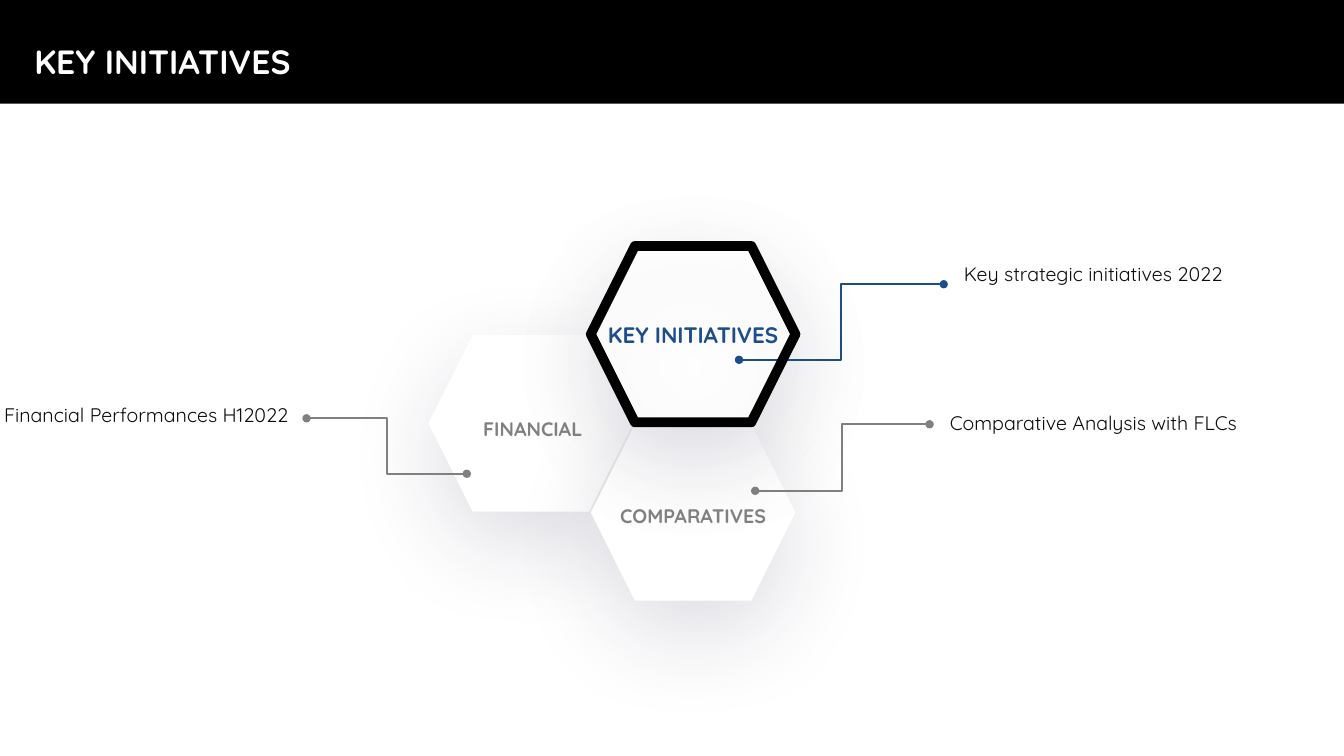
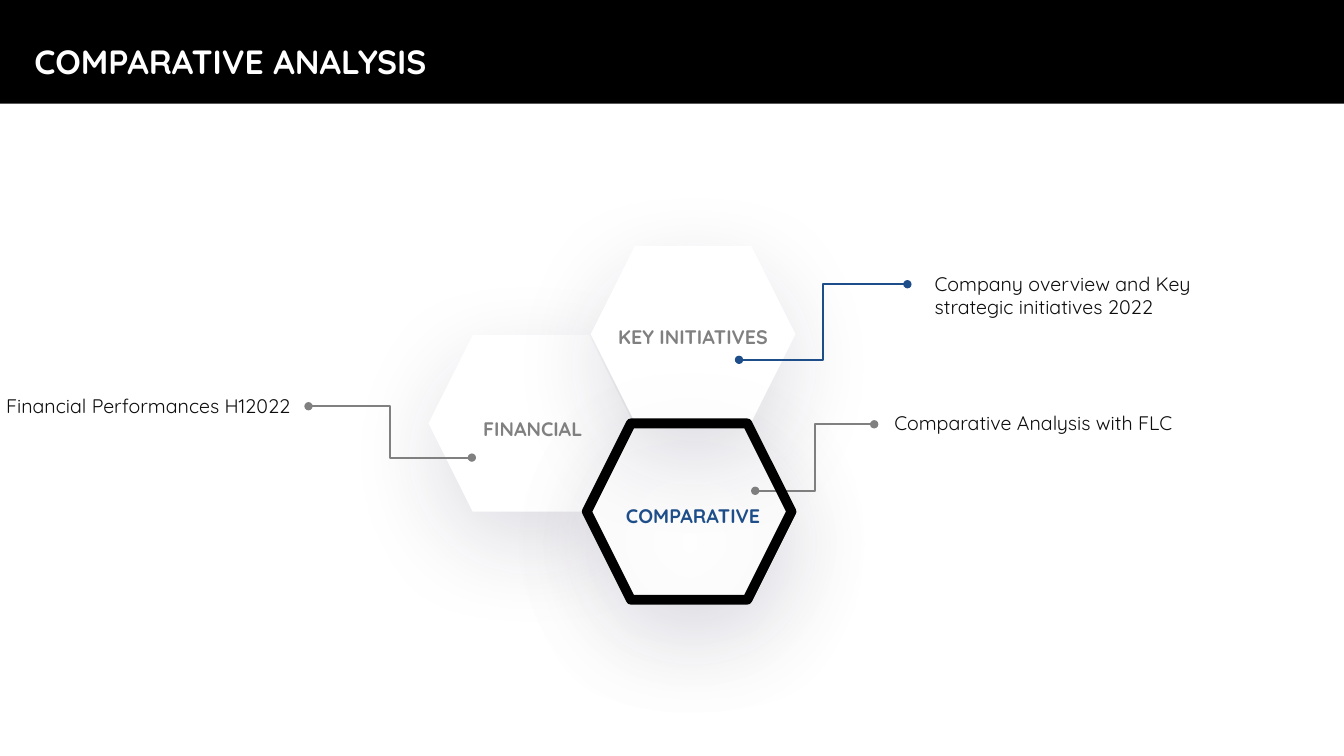
from dataclasses import dataclass

from lxml.etree import SubElement
from pptx import Presentation
from pptx.dml.color import RGBColor
from pptx.enum.shapes import MSO_CONNECTOR, MSO_SHAPE
from pptx.enum.text import MSO_ANCHOR, MSO_AUTO_SIZE, PP_ALIGN
from pptx.oxml.ns import qn
from pptx.util import Inches, Pt

# Shared look
SLIDE_W, SLIDE_H = 13.33, 7.5
BAND_H = 1.03
FONT = "Quicksand"
BLACK, WHITE, INK = "000000", "FFFFFF", "0D0D0D"
BLUE, GRAY, SHADOW = "1D4E89", "808080", "221B43"

# Honeycomb: each column is one step right, each row half a cell down
HEX_W, HEX_H = 2.03, 1.75
COMB_LEFT, COMB_TOP = 4.25, 2.44
COL_STEP, ROW_STEP = 1.61, 1.77 / 2
LABEL_W, LABEL_H = 1.85, 0.22
CALLOUT_W, CALLOUT_H = 2.95, 0.22


@dataclass(frozen=True)
class Cell:
    """A honeycomb cell; the label is offset from the cell's corner."""
    col: int
    row: int
    label_dx: float
    label_dy: float

    @property
    def left(self) -> float:
        return COMB_LEFT + self.col * COL_STEP

    @property
    def top(self) -> float:
        return COMB_TOP + self.row * ROW_STEP


@dataclass(frozen=True)
class Callout:
    """An elbow line from start to end, and text at its own corner."""
    text: str
    start: tuple[float, float]
    end: tuple[float, float]
    corner: tuple[float, float]
    color: str = GRAY


@dataclass(frozen=True)
class Topic:
    title: str
    labels: tuple[str, str, str]
    active: int
    callouts: tuple[Callout, ...]
    active_size: int = 14
    frame_shift: tuple[float, float] = (0, 0)
    edge: float = 0


FINANCIAL = Cell(0, 1, 0.11, 0.82)
COMPARATIVE = Cell(1, 2, 0.09, 0.80)
INITIATIVES = Cell(1, 0, 0.09, 0.79)
CELLS = (FINANCIAL, COMPARATIVE, INITIATIVES)

TOPICS = (
    Topic(
        "KEY INITIATIVES", ("FINANCIAL", "COMPARATIVES", "KEY INITIATIVES"), 2,
        (Callout("Key strategic initiatives 2022",
                 (7.33, 3.57), (9.36, 2.82), (9.56, 2.61), BLUE),
         Callout("Comparative Analysis with FLCs",
                 (7.49, 4.87), (9.22, 4.21), (9.42, 4.08)),
         Callout("Financial Performances H12022",
                 (3.04, 4.15), (4.63, 4.70), (0.04, 4.01))),
        active_size=16,
    ),
    Topic(
        "COMPARATIVE ANALYSIS", ("FINANCIAL", "COMPARATIVE", "KEY INITIATIVES"), 1,
        (Callout("Company overview and Key strategic initiatives 2022",
                 (7.33, 3.57), (9.00, 2.82), (9.27, 2.71), BLUE),
         Callout("Comparative Analysis with FLC",
                 (7.49, 4.87), (8.67, 4.21), (8.87, 4.08)),
         Callout("Financial Performances H12022",
                 (3.06, 4.03), (4.68, 4.54), (0.06, 3.92))),
        frame_shift=(-0.04, -0.01), edge=1,
    ),
)


def rgb(color: str) -> RGBColor:
    return RGBColor.from_string(color)


def write(frame, text: str, *, size: float = 14, color: str = INK,
          bold: bool = False, align=PP_ALIGN.LEFT, leading: float = 16.2,
          anchor=MSO_ANCHOR.TOP, inset: float = 0) -> None:
    """Fill a text frame with one formatted paragraph."""
    frame.word_wrap = True
    frame.auto_size = MSO_AUTO_SIZE.NONE
    frame.vertical_anchor = anchor
    frame.margin_left = frame.margin_right = Inches(inset)
    frame.margin_top = frame.margin_bottom = Inches(inset)
    paragraph = frame.paragraphs[0]
    paragraph.alignment = align
    paragraph.line_spacing = Pt(leading)
    run = paragraph.add_run()
    run.text = text
    run.font.name, run.font.size, run.font.bold = FONT, Pt(size), bold
    run.font.color.rgb = rgb(color)


def add_text(slide, left: float, top: float, width: float, height: float,
             text: str, **style) -> None:
    box = slide.shapes.add_textbox(*map(Inches, (left, top, width, height)))
    write(box.text_frame, text, **style)


def add_figure(slide, kind, left: float, top: float, width: float,
               height: float, fill: str = "", edge: float = 0):
    """Draw a preset shape with an optional fill and black edge."""
    figure = slide.shapes.add_shape(kind, *map(Inches, (left, top, width, height)))
    figure.shadow.inherit = False
    if fill:
        figure.fill.solid()
        figure.fill.fore_color.rgb = rgb(fill)
    else:
        figure.fill.background()
    if edge:
        figure.line.color.rgb = rgb(BLACK)
        figure.line.width = Pt(edge)
    else:
        figure.line.fill.background()
    return figure


def add_hexagon(slide, left: float, top: float, **look) -> None:
    """Draw a honeycomb cell with a soft shadow below it."""
    hexagon = add_figure(slide, MSO_SHAPE.HEXAGON, left, top, HEX_W, HEX_H, **look)
    effects = hexagon._element.spPr.find(qn("a:effectLst"))
    shadow = SubElement(effects, qn("a:outerShdw"), blurRad=str(Pt(69)),
                        dist=str(Pt(22)), dir="5400000", algn="t", rotWithShape="0")
    tint = SubElement(shadow, qn("a:srgbClr"), val=SHADOW)
    SubElement(tint, qn("a:alpha"), val="15000")


def add_callout(slide, callout: Callout) -> None:
    elbow = slide.shapes.add_connector(
        MSO_CONNECTOR.ELBOW, *map(Inches, callout.start + callout.end))
    elbow.line.color.rgb = rgb(callout.color)
    elbow.line.width = Pt(1.5)
    line = elbow.line._get_or_add_ln()
    for tip in ("a:headEnd", "a:tailEnd"):
        SubElement(line, qn(tip), type="oval")
    SubElement(elbow._element.spPr, qn("a:effectLst"))
    add_text(slide, *callout.corner, CALLOUT_W, CALLOUT_H, callout.text)


def add_header(slide, title: str) -> None:
    """Put the black band behind the title placeholder."""
    band = add_figure(slide, MSO_SHAPE.RECTANGLE, 0, 0, SLIDE_W, BAND_H, fill=BLACK)
    heading = slide.shapes.title
    heading._element.addprevious(band._element)
    write(heading.text_frame, title, size=24, color=WHITE, bold=True,
          leading=32.8, anchor=MSO_ANCHOR.MIDDLE, inset=0.03)


def add_topic(deck, layout, topic: Topic) -> None:
    slide = deck.slides.add_slide(layout)
    add_header(slide, topic.title)

    # Cells, then callouts, then the frame around the active cell
    active = CELLS[topic.active]
    for cell in CELLS:
        add_hexagon(slide, cell.left, cell.top, fill=WHITE,
                    edge=topic.edge if cell is active else 0)
    for callout in topic.callouts:
        add_callout(slide, callout)
    shift_x, shift_y = topic.frame_shift
    add_hexagon(slide, active.left + shift_x, active.top + shift_y, edge=7)

    # Cell labels
    for cell, label in zip(CELLS, topic.labels):
        is_active = cell is active
        add_text(slide, cell.left + cell.label_dx, cell.top + cell.label_dy,
                 LABEL_W, LABEL_H, label, bold=True, align=PP_ALIGN.CENTER,
                 size=topic.active_size if is_active else 14,
                 color=BLUE if is_active else GRAY)


def main() -> None:
    deck = Presentation()
    deck.slide_width, deck.slide_height = Inches(SLIDE_W), Inches(SLIDE_H)

    # Title place, set once on the layout
    layout = deck.slide_layouts[5]
    heading = layout.placeholders[0]
    heading.left, heading.top = Inches(0.31), Inches(0.34)
    heading.width, heading.height = Inches(5.42), Inches(0.48)

    for topic in TOPICS:
        add_topic(deck, layout, topic)
    deck.save("out.pptx")


if __name__ == "__main__":
    main()
